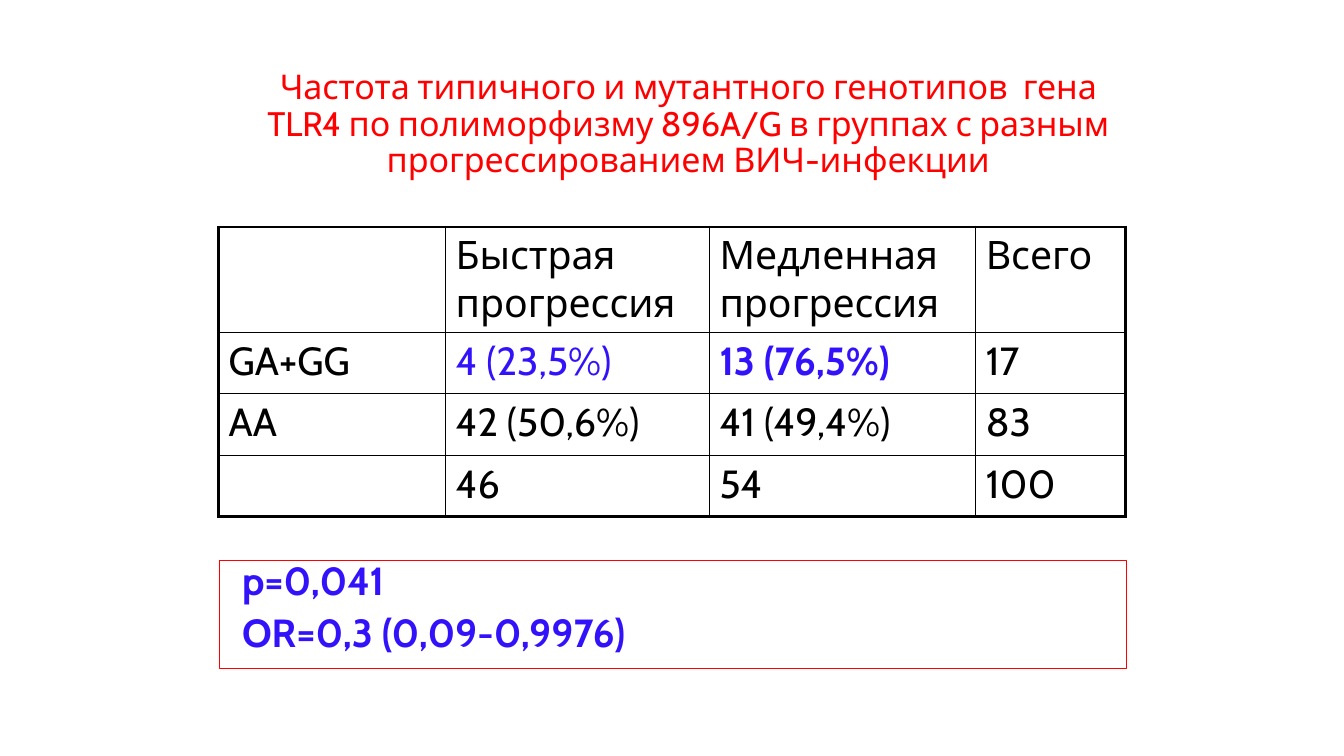
from lxml import etree
from pptx import Presentation
from pptx import util as u
from pptx.dml.color import RGBColor
from pptx.enum import shapes, text
from pptx.oxml import ns

RED = RGBColor(0xFF, 0x00, 0x00)
BLUE = RGBColor(0x32, 0x11, 0xFB)
BLACK = RGBColor(0x00, 0x00, 0x00)
FONT = "Cabin"
THIN, THICK = 1, 2.25

TITLE = ("Частота типичного и мутантного генотипов  гена TLR4 по полиморфизму "
         "896A/G в группах с разным прогрессированием ВИЧ-инфекции")
GENOTYPES = [
    ["", "Быстрая прогрессия", "Медленная прогрессия", "Всего"],
    ["GA+GG", "4 (23,5%)", "13 (76,5%)", "17"],
    ["AA", "42 (50,6%)", "41 (49,4%)", "83"],
    ["", "46", "54", "100"],
]
COLUMN_WIDTHS = [5.72, 6.65, 6.71, 3.78]
ROW_HEIGHTS = [2.62, 1.55, 1.55, 1.55]
STATISTICS = ["p=0,041", "OR=0,3 (0,09-0,9976)"]
HIGHLIGHTS = {(1, 1): dict(color=BLUE), (1, 2): dict(color=BLUE, bold=True)}


def write(paragraph, wording, size=28, color=BLACK, bold=False,
          align=text.PP_ALIGN.LEFT, line_spacing=1.0, before=0):
    """Put formatted wording into a paragraph."""
    run = paragraph.add_run()
    run.text = wording
    run.font.name = FONT
    run.font.size = u.Pt(size)
    run.font.bold = bold
    run.font.color.rgb = color
    paragraph.alignment = align
    paragraph.line_spacing = line_spacing
    paragraph.space_before = u.Pt(before)


def place_title(slide):
    """Move and format the title placeholder."""
    title = slide.shapes.title
    title.left, title.top = u.Cm(5.92), u.Cm(1.6)
    title.width, title.height = u.Cm(22.86), u.Cm(3.1)
    frame = title.text_frame
    frame.word_wrap = True
    frame.auto_size = text.MSO_AUTO_SIZE.NONE
    frame.vertical_anchor = text.MSO_ANCHOR.MIDDLE
    write(frame.paragraphs[0], TITLE, size=24.3, color=RED,
          align=text.PP_ALIGN.CENTER, line_spacing=0.9)


def draw_border(cell, side, weight):
    """Add one solid black border to a table cell."""
    properties = cell._tc.get_or_add_tcPr()
    line = etree.SubElement(properties, ns.qn(f"a:ln{side}"), w=str(u.Pt(weight)))
    fill = etree.SubElement(line, ns.qn("a:solidFill"))
    etree.SubElement(fill, ns.qn("a:srgbClr"), val=str(BLACK))


def add_genotype_table(slide):
    """Add the genotype frequencies with a thick outer frame."""
    last_row, last_column = len(ROW_HEIGHTS) - 1, len(COLUMN_WIDTHS) - 1
    table = slide.shapes.add_table(
        len(ROW_HEIGHTS), len(COLUMN_WIDTHS), u.Cm(5.51), u.Cm(5.72),
        u.Cm(sum(COLUMN_WIDTHS)), u.Cm(sum(ROW_HEIGHTS))).table
    table.first_row = table.horz_banding = False
    for column, width in zip(table.columns, COLUMN_WIDTHS):
        column.width = u.Cm(width)
    for row, height in zip(table.rows, ROW_HEIGHTS):
        row.height = u.Cm(height)
    for r, frequencies in enumerate(GENOTYPES):
        for c, wording in enumerate(frequencies):
            cell = table.cell(r, c)
            outer_sides = {"L": c == 0, "R": c == last_column,
                           "T": r == 0, "B": r == last_row}
            for side, is_outer in outer_sides.items():
                draw_border(cell, side, THICK if is_outer else THIN)
            cell.fill.background()
            if wording:
                write(cell.text_frame.paragraphs[0], wording,
                      **HIGHLIGHTS.get((r, c), {}))


def add_statistics(slide):
    """Add the red frame with the significance and odds ratio."""
    panel = slide.shapes.add_shape(shapes.MSO_SHAPE.RECTANGLE, u.Cm(5.54),
                                   u.Cm(14.12), u.Cm(22.86), u.Cm(2.72))
    panel.shadow.inherit = False
    panel.fill.background()
    panel.line.color.rgb = RED
    panel.line.width = u.Pt(0.75)
    frame = panel.text_frame
    frame.word_wrap = True
    frame.vertical_anchor = text.MSO_ANCHOR.TOP
    for index, statistic in enumerate(STATISTICS):
        paragraph = frame.add_paragraph() if index else frame.paragraphs[0]
        write(paragraph, statistic, color=BLUE, bold=True,
              line_spacing=0.8, before=10)
        indents = paragraph._p.get_or_add_pPr()
        indents.set("marL", str(u.Cm(1.02)))
        indents.set("indent", str(u.Cm(-0.71)))


def main():
    """Build the slide and save it."""
    deck = Presentation()
    deck.slide_width, deck.slide_height = u.Cm(33.87), u.Cm(19.05)
    slide = deck.slides.add_slide(deck.slide_layouts[5])
    place_title(slide)
    add_statistics(slide)
    add_genotype_table(slide)
    deck.save("out.pptx")


if __name__ == "__main__":
    main()
